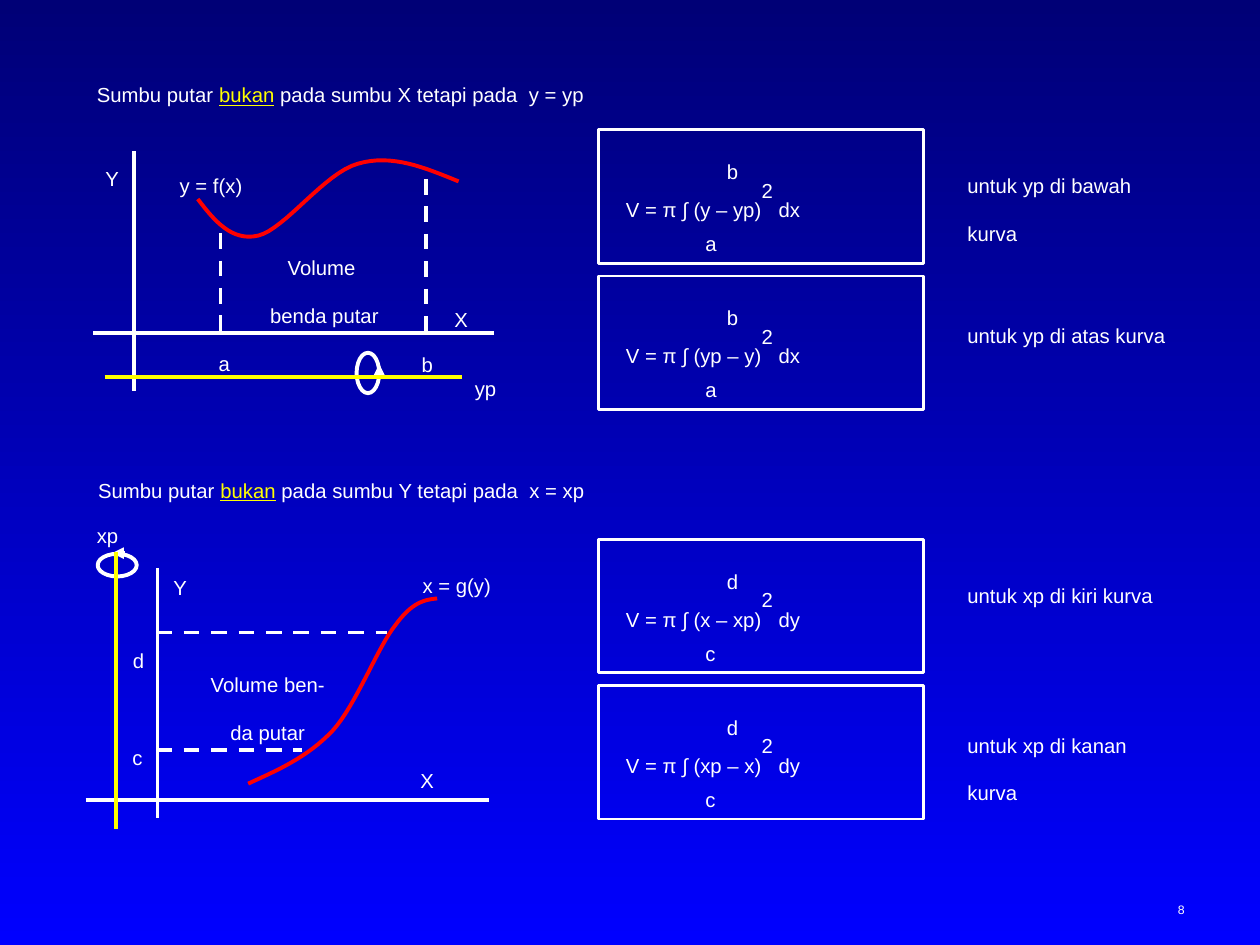
from lxml.etree import SubElement
from pptx import Presentation
from pptx.dml.color import RGBColor
from pptx.enum.dml import MSO_LINE
from pptx.enum.shapes import MSO_CONNECTOR, MSO_SHAPE
from pptx.enum.text import MSO_ANCHOR, PP_ALIGN
from pptx.oxml.ns import qn
from pptx.util import Inches, Pt

WHITE = RGBColor(0xFF, 0xFF, 0xFF)
YELLOW = RGBColor(0xFF, 0xFF, 0x00)
RED = RGBColor(0xFF, 0x00, 0x00)
NAVY = RGBColor(0x00, 0x00, 0x76)
BLUE = RGBColor(0x00, 0x00, 0xFF)

LOWERED, RAISED = -25, 30  # baseline shift, percent
CURVE_STEPS = 16

# Content: headings as (left, top, text before, stressed word, text after)
HEADINGS = [
    (0.67, 0.42, "Sumbu putar ", "bukan", " pada sumbu X tetapi pada  y = yp"),
    (0.68, 3.56, "Sumbu putar ", "bukan", " pada sumbu Y tetapi pada  x = xp"),
]

# Panels as (top, integral, differential, upper limit, lower limit, note)
PANELS = [
    (1.03, "V = π ∫ (y – yp)", " dx", "b", "a", "untuk yp di bawah kurva"),
    (2.19, "V = π ∫ (yp – y)", " dx", "b", "a", "untuk yp di atas kurva"),
    (4.28, "V = π ∫ (x – xp)", " dy", "d", "c", "untuk xp di kiri kurva"),
    (5.44, "V = π ∫ (xp – x)", " dy", "d", "c", "untuk xp di kanan kurva"),
]
NOTE_TOPS = [1.14, 2.33, 4.39, 5.58]

# Labels as (left, top, width, height, lines, alignment)
CENTER, LEFT = PP_ALIGN.CENTER, PP_ALIGN.LEFT
LABELS = [
    (0.88, 1.14, 1.59, 0.58, ["y = f(x)"], CENTER),
    (3.15, 2.2, 1.02, 0.58, ["X"], CENTER),
    (2.88, 2.56, 1.02, 0.42, ["b"], CENTER),
    (1.27, 2.55, 1.02, 0.42, ["a"], CENTER),
    (0.38, 1.08, 1.02, 0.58, ["Y"], CENTER),
    (1.52, 1.79, 2.11, 0.92, ["Volume ", "benda putar"], CENTER),
    (3.67, 2.75, 0.5, 0.44, ["yp"], LEFT),
    (2.83, 4.31, 1.59, 0.58, ["x = g(y)"], CENTER),
    (2.88, 5.86, 1.02, 0.58, ["X"], CENTER),
    (0.59, 4.91, 1.02, 0.42, ["d"], CENTER),
    (0.58, 5.68, 1.02, 0.42, ["c"], CENTER),
    (0.92, 4.33, 1.02, 0.58, ["Y"], CENTER),
    (1.07, 5.1, 2.11, 0.77, ["Volume ben-", "da putar"], CENTER),
    (0.67, 3.92, 0.5, 0.44, ["xp"], LEFT),
]

# Lines as (x1, y1, x2, y2)
AXES = [(1.06, 1.2, 1.06, 3.1), (0.74, 2.64, 3.92, 2.64),
        (1.25, 4.51, 1.25, 6.49), (0.68, 6.35, 3.88, 6.35)]
BOUNDS = [(1.75, 1.85, 1.75, 2.64), (3.38, 1.42, 3.38, 2.63),
          (1.24, 5.95, 2.4, 5.95), (1.24, 5.02, 3.07, 5.02)]
ROTATION_AXES = [(0.83, 2.99, 3.67, 2.99), (0.92, 4.38, 0.92, 6.58)]
TURN_ARROWS = [(3.01, 3, 3.01, 2.89), (0.99, 4.39, 0.89, 4.39)]
TURN_RINGS = [(2.83, 2.8, 0.18, 0.32, 0), (0.84, 4.33, 0.18, 0.31, 270)]

# Curves: a start point, then two controls and an end point per segment
CURVES = [
    [(1.57, 1.58), (1.7, 1.75), (1.84, 1.92), (2.05, 1.87), (2.26, 1.82),
     (2.58, 1.37), (2.84, 1.3), (3.11, 1.22), (3.37, 1.33), (3.64, 1.44)],
    [(1.97, 6.22), (2.21, 6.11), (2.44, 6.01), (2.64, 5.8), (2.83, 5.59),
     (3, 5.13), (3.14, 4.96), (3.27, 4.78), (3.37, 4.76), (3.47, 4.75)],
]

prs = Presentation()
prs.slide_width, prs.slide_height = Inches(10), Inches(7.5)
slide = prs.slides.add_slide(prs.slide_layouts[6])
shapes = slide.shapes


def add_text(left, top, width, height, paragraphs, align=LEFT, size=20):
    """Each paragraph is a list of (text, baseline shift, colour) runs."""
    box = shapes.add_textbox(*map(Inches, (left, top, width, height)))
    frame = box.text_frame
    frame.word_wrap = True
    for i, runs in enumerate(paragraphs):
        paragraph = frame.paragraphs[0] if i == 0 else frame.add_paragraph()
        paragraph.alignment = align
        for text, shift, color in runs:
            run = paragraph.add_run()
            run.text = text
            run.font.name, run.font.size = "Arial", Pt(size)
            run.font.color.rgb = color
            if color == YELLOW:
                run.font.underline = True
            if shift:
                run.font._element.set("baseline", str(shift * 1000))
    return frame


def plain(text):
    return [(text, LOWERED, WHITE)]


def style_outline(shape, color=WHITE, width=2.25):
    shape.shadow.inherit = False
    shape.fill.background()
    shape.line.color.rgb = color
    shape.line.width = Pt(width)


def add_line(ends, color=WHITE, dashed=False, arrow=False):
    line = shapes.add_connector(MSO_CONNECTOR.STRAIGHT, *map(Inches, ends))
    line.line.color.rgb = color
    line.line.width = Pt(2.25)
    if dashed:
        line.line.dash_style = MSO_LINE.DASH
    if arrow:
        SubElement(line.line._get_or_add_ln(), qn("a:tailEnd"), type="triangle")
    SubElement(line._element.spPr, qn("a:effectLst"))


def bezier(p0, p1, p2, p3, t):
    s = 1 - t
    return tuple(Inches(s**3 * a + 3 * s * s * t * b + 3 * s * t * t * c + t**3 * d)
                 for a, b, c, d in zip(p0, p1, p2, p3))


def add_curve(points):
    path = [bezier(*points[i:i + 4], step / CURVE_STEPS)
            for i in range(0, len(points) - 1, 3)
            for step in range(1, CURVE_STEPS + 1)]
    builder = shapes.build_freeform(*map(Inches, points[0]))
    builder.add_line_segments(path, close=False)
    style_outline(builder.convert_to_shape(), RED)


# Background
background = slide.background.fill
background.gradient()
background.gradient_angle = 270
for stop, color in zip(background.gradient_stops, (NAVY, BLUE)):
    stop.color.rgb = color

# Headings
for left, top, before, stressed, after in HEADINGS:
    runs = plain(before) + [(stressed, LOWERED, YELLOW)] + plain(after)
    add_text(left, top, 6.9, 0.44, [runs])

# Diagrams
for left, top, width, height, turn in TURN_RINGS:
    ring = shapes.add_shape(MSO_SHAPE.OVAL, *map(Inches, (left, top, width, height)))
    ring.rotation = turn
    style_outline(ring)
for ends in TURN_ARROWS:
    add_line(ends, arrow=True)
for ends in AXES:
    add_line(ends)
for ends in BOUNDS:
    add_line(ends, dashed=True)
for points in CURVES:
    add_curve(points)
for *place, lines, align in LABELS:
    add_text(*place, [plain(text) for text in lines], align)
for ends in ROTATION_AXES:
    add_line(ends, YELLOW)

# Formula panels with their notes
for (top, integral, differential, upper, lower, note), note_top in zip(PANELS, NOTE_TOPS):
    panel = shapes.add_shape(MSO_SHAPE.RECTANGLE, *map(Inches, (4.75, top, 2.58, 1.06)))
    style_outline(panel, width=1.5)
    formula = plain(integral) + [("2", RAISED, WHITE)] + plain(differential)
    add_text(4.87, top + 0.3, 2.5, 0.44, [formula])
    add_text(5.67, top, 0.37, 0.44, [plain(upper)])
    add_text(5.5, top + 0.57, 0.36, 0.44, [plain(lower)])
    add_text(7.58, note_top, 1.83, 0.77, [plain(note)])

# Slide number
number = add_text(7.17, 6.83, 2.33, 0.5, [[("8", 0, WHITE)]], PP_ALIGN.RIGHT, 7)
number.vertical_anchor = MSO_ANCHOR.BOTTOM

prs.save("out.pptx")
